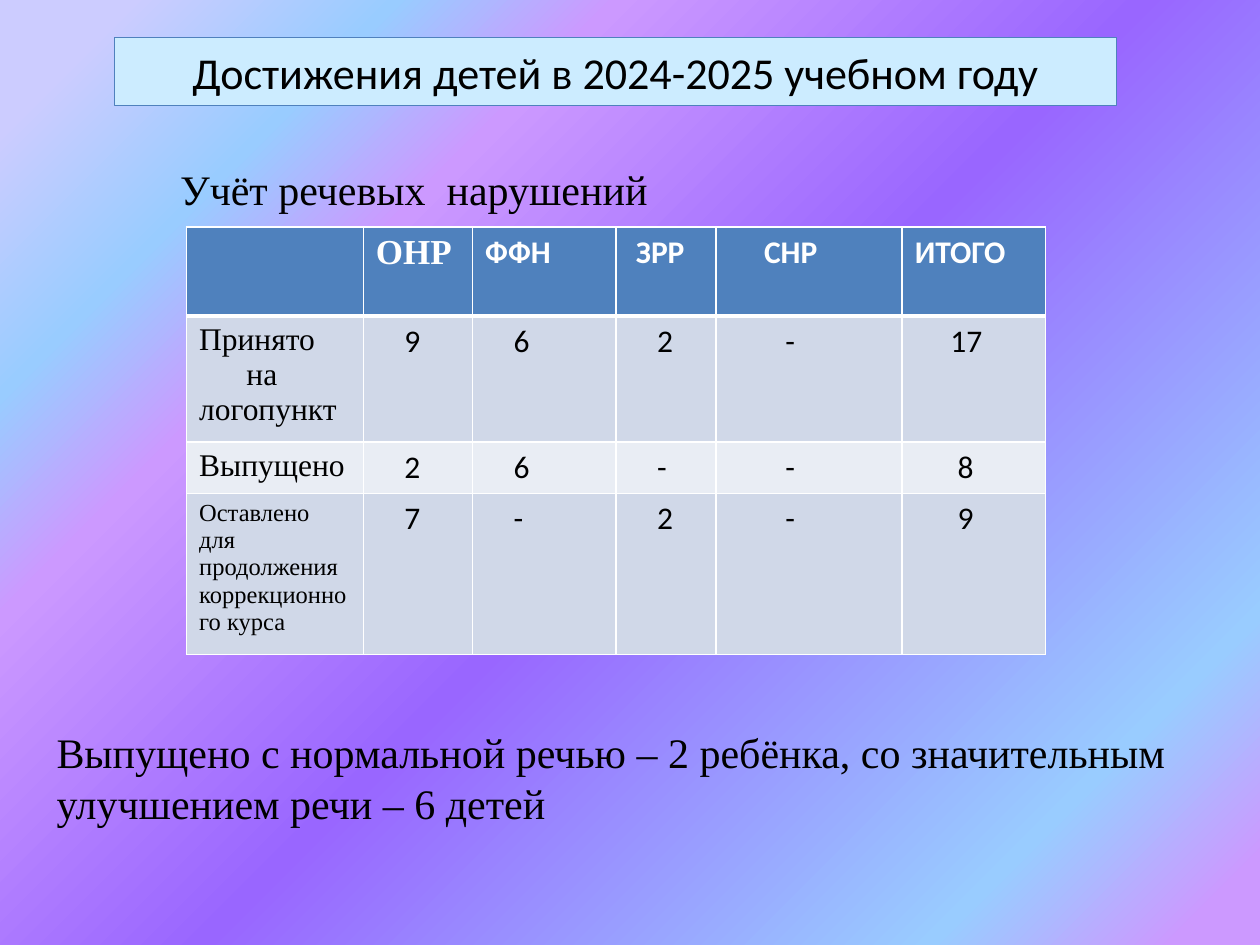
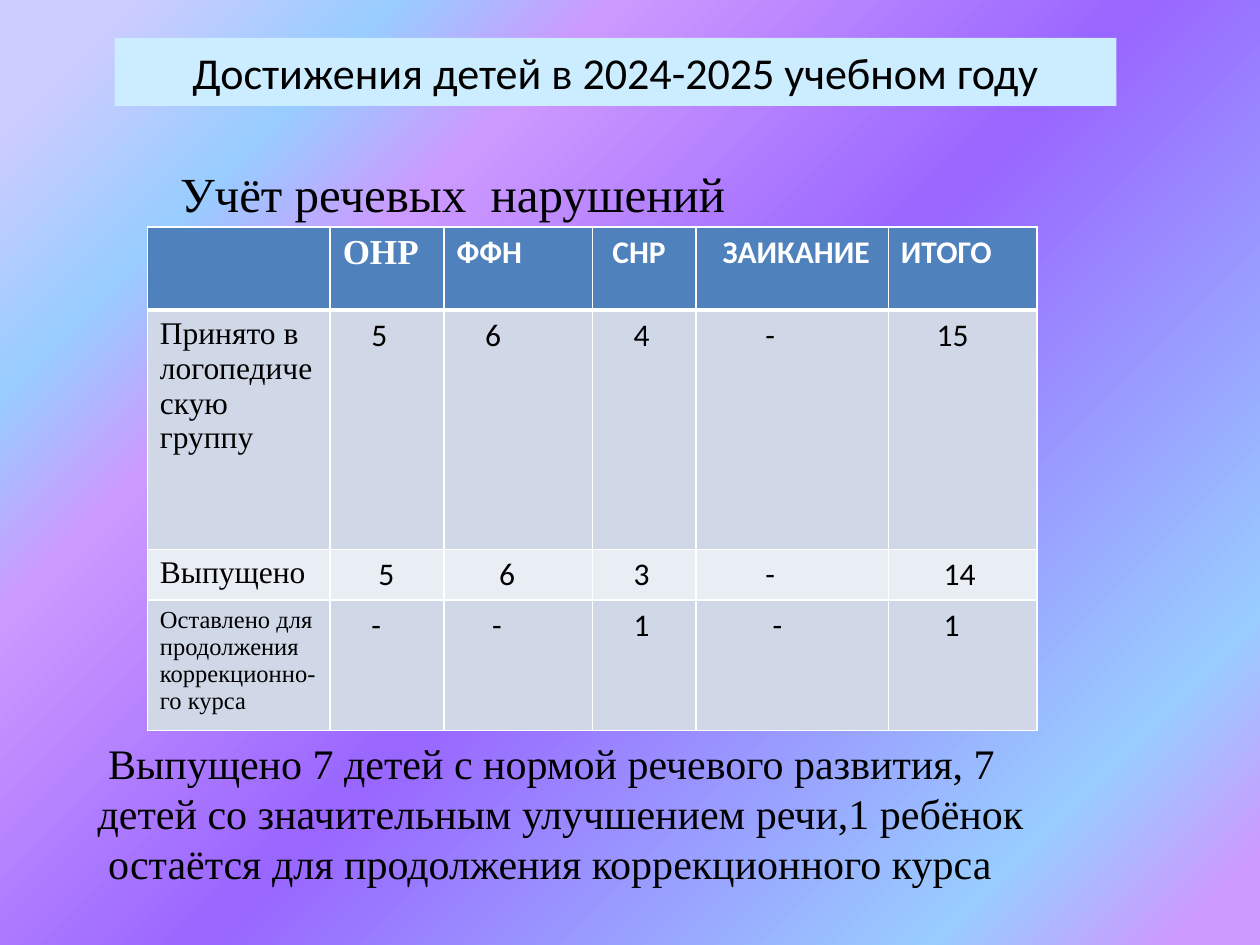
"""Build two slides with tables of children's speech results for 2024-2025."""
from dataclasses import dataclass

from lxml import etree
from pptx import Presentation
from pptx.dml.color import RGBColor
from pptx.enum.text import MSO_ANCHOR, MSO_AUTO_SIZE, PP_ALIGN
from pptx.oxml.ns import qn
from pptx.util import Pt

LEFT, CENTER = PP_ALIGN.LEFT, PP_ALIGN.CENTER
MIDDLE = MSO_ANCHOR.MIDDLE
NO_FIT = MSO_AUTO_SIZE.NONE
TITLE_ONLY = 5


@dataclass(frozen=True)
class Theme:
    sans: str = "Calibri"
    serif: str = "Times New Roman"
    black: str = "000000"
    white: str = "FFFFFF"
    band: str = "CCECFF"
    header: str = "4F81BD"
    odd_row: str = "D0D8E8"
    even_row: str = "E9EDF4"
    gradient: tuple = ((4, "CC99FF"), (15, "99CCFF"), (48, "9966FF"),
                       (72, "CC99FF"), (82, "99CCFF"), (94, "CCCCFF"))
    title: float = 25.2
    note: int = 24
    head: int = 20
    cell: int = 18
    small: int = 14
    space: float = 4.07


T = Theme()


def write(tf, lines, font, size, color=T.black, bold=False, align=LEFT):
    """Fill a text frame with (text, first-line indent) pairs."""
    for i, (text, indent) in enumerate(lines):
        p = tf.paragraphs[0] if i == 0 else tf.add_paragraph()
        p.text = text
        p.alignment = align
        if indent:
            pPr = p._p.get_or_add_pPr()
            pPr.set("marL", "0")
            pPr.set("indent", str(Pt(indent)))
        p.font.name = font
        p.font.size = Pt(size)
        p.font.bold = bold
        p.font.color.rgb = RGBColor.from_string(color)


def add_border(cell, side, width):
    """Add a white line to one side of a table cell."""
    ln = etree.SubElement(cell._tc.get_or_add_tcPr(), qn(f"a:{side}"), w=str(Pt(width)))
    fill = etree.SubElement(ln, qn("a:solidFill"))
    etree.SubElement(fill, qn("a:srgbClr"), val=T.white)


TITLE = "Достижения детей в 2024-2025 учебном году"
SUBTITLE = "Учёт речевых  нарушений"

SLIDES = [
    dict(
        outlined=True, subtitle_size=24, subtitle_box=(95.8, 90, 284.4, 36),
        table_left=106.6, cols=(101, 62.5, 82, 57, 106.5, 82), rows=(51, 70.5, 29.5, 92),
        heads=["ОНР", "ФФН", "ЗРР", "СНР", "ИТОГО"], head_spaces=(0, 0, 1, 5, 0),
        labels=[[("Принято", 0), ("на логопункт", 27)],
                [("Выпущено", 0)],
                [("Оставлено для продолжения коррекционного курса", 0)]],
        values=["9 6 2 - 17", "2 6 - - 8", "7 - 2 - 9"],
        spaces=[(4, 4, 4, 8, 5), (4, 4, 4, 8, 6), (4, 4, 4, 8, 6)],
        note_box=(25.2, 411.8, 694, 65.5),
        note=[("Выпущено с нормальной речью – 2 ребёнка, "
               "со значительным улучшением речи – 6 детей", 0)]),
    dict(
        outlined=False, subtitle_size=28, subtitle_box=(95.8, 90, 329, 41),
        table_left=84.2, cols=(104.5, 65, 85, 59, 110, 85), rows=(47.5, 136.8, 29, 74),
        heads=["ОНР", "ФФН", "СНР", "ЗАИКАНИЕ", "ИТОГО"], head_spaces=(0, 0, 1, 2, 0),
        labels=[[("Принято в логопедическую группу", 0)],
                [("Выпущено", 0)],
                [("Оставлено для продолжения коррекционно-", 0), ("го курса", 0)]],
        values=["5 6 4 - 15", "5 6 3 - 14", "- - 1 - 1"],
        spaces=[(4, 4, 4, 8, 5), (5, 6, 4, 8, 6), (4, 5, 4, 9, 6)],
        note_box=(36.7, 417.6, 578, 94.3),
        note=[("Выпущено 7 детей с нормой речевого развития, 7", 18),
              ("детей со значительным улучшением речи,1 ребёнок", 12),
              ("остаётся для продолжения коррекционного курса", 18)]),
]

prs = Presentation()
prs.slide_width, prs.slide_height = Pt(720), Pt(540)

fill = prs.slide_master.background.fill
fill.gradient()
fill.gradient_angle = 135
stops = prs.slide_master.element.find(f".//{qn('a:gsLst')}")
for gs in list(stops):
    stops.remove(gs)
for pos, color in T.gradient:
    gs = etree.SubElement(stops, qn("a:gs"), pos=str(pos * 1000))
    etree.SubElement(gs, qn("a:srgbClr"), val=color)

for data in SLIDES:
    s = prs.slides.add_slide(prs.slide_layouts[TITLE_ONLY])

    sp = s.shapes.title
    sp.left, sp.top, sp.width, sp.height = Pt(65.5), Pt(21.6), Pt(572.4), Pt(38.9)
    sp.fill.solid()
    sp.fill.fore_color.rgb = RGBColor.from_string(T.band)
    if data["outlined"]:
        sp.line.color.rgb = RGBColor.from_string(T.header)
        sp.line.width = Pt(0.75)
    tf = sp.text_frame
    tf.auto_size = NO_FIT
    tf.vertical_anchor = MIDDLE
    write(tf, [(TITLE, 0)], T.sans, T.title, align=CENTER)

    for box, lines, size, wrap in (
            (data["subtitle_box"], [(SUBTITLE, 0)], data["subtitle_size"], False),
            (data["note_box"], data["note"], T.note, True)):
        tf = s.shapes.add_textbox(*map(Pt, box)).text_frame
        tf.word_wrap = wrap
        write(tf, lines, T.serif, size)

    cols, rows = data["cols"], data["rows"]
    table = s.shapes.add_table(len(rows), len(cols), Pt(data["table_left"]), Pt(129.6),
                               Pt(sum(cols)), Pt(sum(rows))).table
    for col, width in zip(table.columns, cols):
        col.width = Pt(width)
    for row, height in zip(table.rows, rows):
        row.height = Pt(height)

    grid = [data["heads"]] + [v.split() for v in data["values"]]
    spaces = [data["head_spaces"]] + data["spaces"]
    for r in range(len(rows)):
        for c in range(len(cols)):
            cell = table.cell(r, c)
            for side in ("lnL", "lnR", "lnT", "lnB"):
                thick = (r, side) in ((0, "lnB"), (1, "lnT"))
                add_border(cell, side, 3 if thick else 1)
            color = T.header if r == 0 else T.odd_row if r % 2 else T.even_row
            cell.fill.solid()
            cell.fill.fore_color.rgb = RGBColor.from_string(color)
            if c:
                lines = [(grid[r][c - 1], spaces[r][c - 1] * T.space)]
                first = r == 0 and c == 1
                write(cell.text_frame, lines, T.serif if first else T.sans,
                      T.head if first else T.cell,
                      T.black if r else T.white, bold=r == 0)
            elif r:
                write(cell.text_frame, data["labels"][r - 1], T.serif,
                      T.small if r == len(rows) - 1 else T.cell)

prs.save("out.pptx")
